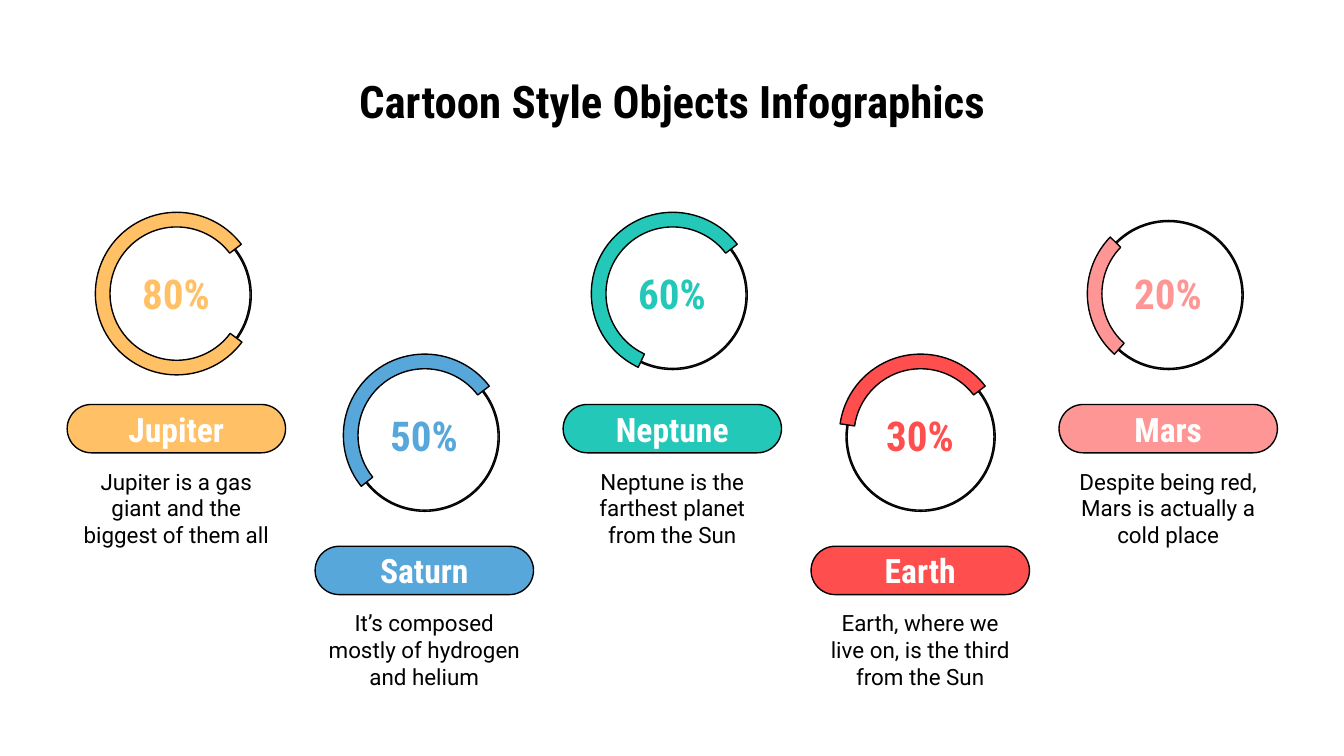
"""Build a slide of five planet progress rings."""
from collections import namedtuple

from pptx import Presentation
from pptx.dml.color import RGBColor
from pptx.enum.shapes import MSO_SHAPE as Preset
from pptx.enum.text import MSO_ANCHOR as Anchor, PP_ALIGN as Align
from pptx.util import Emu, Pt

PX = 4572
BLACK = RGBColor(0x00, 0x00, 0x00)
WHITE = RGBColor(0xFF, 0xFF, 0xFF)
AMBER = RGBColor(0xFF, 0xC0, 0x66)
BLUE = RGBColor(0x57, 0xA7, 0xDB)
TEAL = RGBColor(0x23, 0xC8, 0xB9)
RED = RGBColor(0xFF, 0x4E, 0x4E)
PINK = RGBColor(0xFF, 0x96, 0x96)

TITLE_FONT = {"name": "Roboto Condensed", "size": Pt(24), "bold": True}
PERCENT_FONT = {"name": "Roboto Condensed", "size": Pt(22), "bold": True}
NAME_FONT = {"name": "Roboto Condensed", "size": Pt(18), "bold": True}
BODY_FONT = {"name": "Roboto", "size": Pt(12), "bold": False}

Box = namedtuple("Box", "left top width height")
Planet = namedtuple("Planet", "name percent color arc description")

PLANETS = [
    Planet("Jupiter", "80%", AMBER, (21.97, 193.6, 0.09),
           "Jupiter is a gas giant and the biggest of them all"),
    Planet("Saturn", "50%", BLUE, (84.73, 193.6, 0.09),
           "It’s composed mostly of hydrogen and helium"),
    Planet("Neptune", "60%", TEAL, (69.01, 193.6, 0.09),
           "Neptune is the farthest planet from the Sun"),
    Planet("Earth", "30%", RED, (112.91, 193.6, 0.09),
           "Earth, where we live on, is the third from the Sun"),
    Planet("Mars", "20%", PINK, (79.09, 134.44, 0.09),
           "Despite being red, Mars is actually a cold place"),
]
COLUMN = Box(100, 316, 325, 508)
COLUMN_STEP = 369
ROW_DROP = 211


def inside(box, left, top, width, height):
    """Return a box placed relative to the corner of another."""
    return Box(box.left + left, box.top + top, width, height)


def to_emu(box):
    """Convert a box in px to EMU lengths."""
    return [Emu(value * PX) for value in box]


def write_text(shape, text, font_values, color, anchor=Anchor.MIDDLE):
    """Write one centred paragraph in a shape."""
    frame = shape.text_frame
    margin = Emu(20 * PX)
    frame_values = {"word_wrap": True, "vertical_anchor": anchor,
                    "margin_left": margin, "margin_right": margin,
                    "margin_top": margin, "margin_bottom": margin}
    for key, value in frame_values.items():
        setattr(frame, key, value)
    paragraph = frame.paragraphs[0]
    paragraph.alignment = Align.CENTER
    run = paragraph.add_run()
    run.text = text
    for key, value in font_values.items():
        setattr(run.font, key, value)
    run.font.color.rgb = color


def add_text(slide, box, *text_values):
    """Add a text box holding one paragraph."""
    write_text(slide.shapes.add_textbox(*to_emu(box)), *text_values)


def add_outlined(slide, preset, box, adjustments, fill=None):
    """Add a preset shape with a thin black outline."""
    shape = slide.shapes.add_shape(preset, *to_emu(box))
    shape.shadow.inherit = False
    for index, value in enumerate(adjustments):
        shape.adjustments[index] = value
    if fill is None:
        shape.fill.background()
    else:
        shape.fill.solid()
        shape.fill.fore_color.rgb = fill
    shape.line.color.rgb = BLACK
    shape.line.width = Pt(0.75)
    return shape


def add_title(slide, box):
    """Place the slide title."""
    add_text(slide, box, "Cartoon Style Objects Infographics",
             TITLE_FONT, BLACK, Anchor.TOP)


def add_planet(slide, box, planet):
    """Place a progress ring, name pill and description in a column."""
    add_outlined(slide, Preset.DONUT, inside(box, 52, 12, 222, 222), [0.008])
    add_outlined(slide, Preset.BLOCK_ARC, inside(box, 42, 0, 242, 242),
                 planet.arc, planet.color)
    add_text(slide, inside(box, 50, 94, 224, 52),
             planet.percent, PERCENT_FONT, planet.color)
    add_text(slide, inside(box, 0, 372, box.width, 136),
             planet.description, BODY_FONT, BLACK)
    pill = add_outlined(slide, Preset.ROUNDED_RECTANGLE,
                        inside(box, 0, 286, box.width, 72), [0.5], planet.color)
    write_text(pill, planet.name, NAME_FONT, WHITE)


def main():
    """Build and save the slide."""
    presentation = Presentation()
    presentation.slide_width = Emu(2000 * PX)
    presentation.slide_height = Emu(1125 * PX)
    slide = presentation.slides.add_slide(presentation.slide_layouts[6])
    add_title(slide, Box(100, 90, 1800, 126))
    for index, planet in enumerate(PLANETS):
        column = inside(COLUMN, index * COLUMN_STEP, index % 2 * ROW_DROP,
                        COLUMN.width, COLUMN.height)
        add_planet(slide, column, planet)
    presentation.save("out.pptx")


if __name__ == "__main__":
    main()
